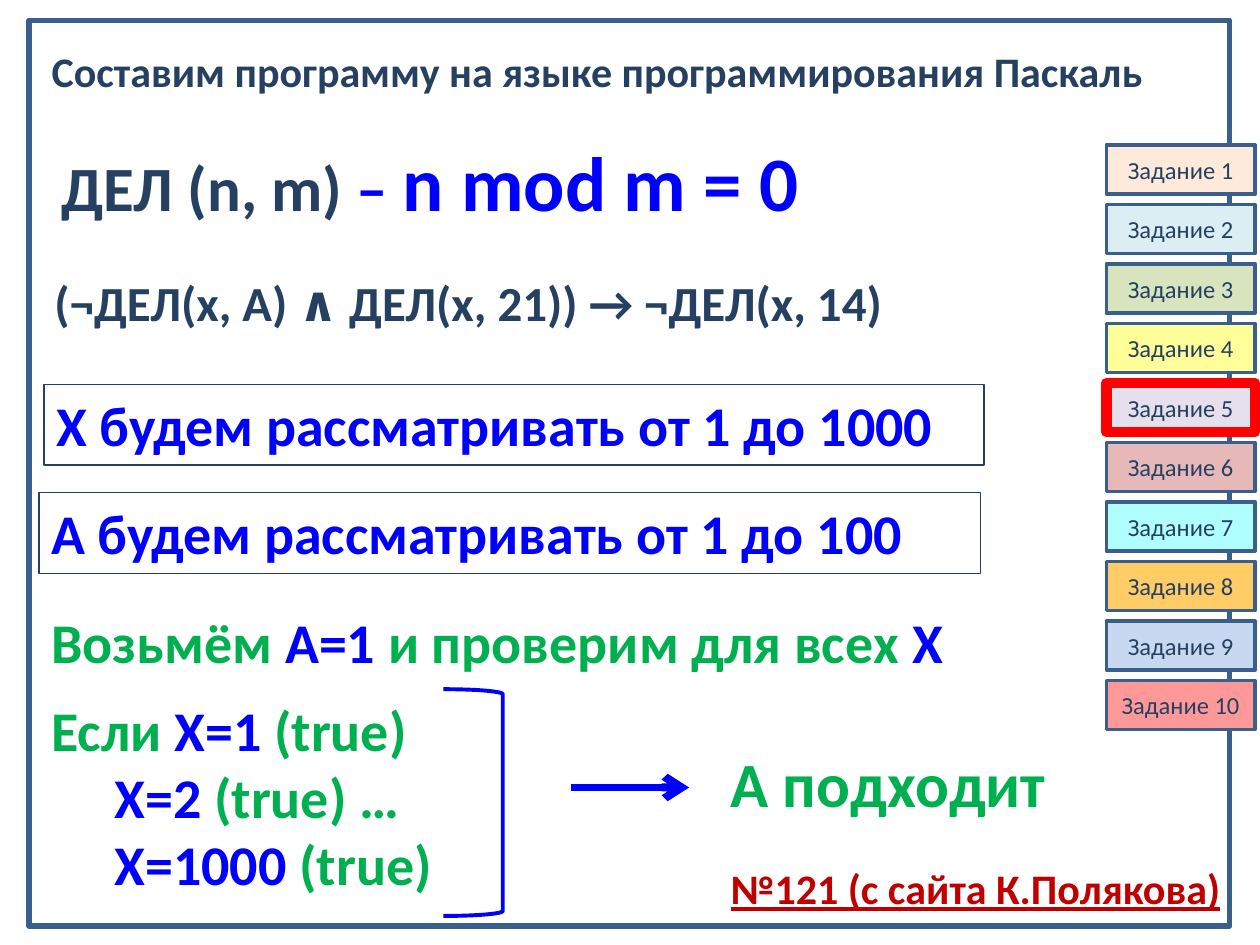
from lxml.etree import SubElement
from pptx import Presentation
from pptx.dml.color import RGBColor
from pptx.enum.shapes import MSO_CONNECTOR, MSO_SHAPE
from pptx.enum.text import MSO_ANCHOR, MSO_AUTO_SIZE, PP_ALIGN
from pptx.oxml.ns import qn
from pptx.util import Inches, Pt

NAVY, BLUE, GREEN, RED, FRAME = "254061", "0000FF", "00B050", "C00000", "3A5F8C"

# Content: a paragraph is a list of (text, colour, size) runs
title = [[("Составим программу на языке программирования Паскаль", NAVY, 24)]]
title_box = (0.31, 0.31, 8.95, 0.5)

texts = [  # position, paragraphs, alignment, wrap
    ((0.39, 1.02, 7.58, 0.84),
     [[("ДЕЛ (n, m) ", NAVY, 36), ("– ", BLUE, 36), ("n mod m = 0", BLUE, 44)]],
     PP_ALIGN.LEFT, True),
    ((0.31, 2.11, 6.81, 0.57),
     [[("(¬ДЕЛ(x, А) ∧ ДЕЛ(x, 21)) → ¬ДЕЛ(x, 14)", NAVY, 28)]],
     PP_ALIGN.CENTER, False),
    ((0.31, 4.77, 7.5, 0.64),
     [[("Возьмём ", GREEN, 32), ("А=1", BLUE, 32),
       (" и проверим для всех", GREEN, 32), (" Х", BLUE, 32)]],
     PP_ALIGN.LEFT, True),
    ((0.31, 5.47, 3.83, 1.72),
     [[("Если ", GREEN, 32), ("Х=1", BLUE, 32), (" (true)", GREEN, 32)],
      [("\tХ=2", BLUE, 32), (" (true) …", GREEN, 32)],
      [("\tХ=1000", BLUE, 32), (" (true)", GREEN, 32)]],
     PP_ALIGN.LEFT, True),
    ((5.7, 5.86, 2.7, 0.71), [[("А подходит", GREEN, 36)]], PP_ALIGN.LEFT, False),
]
source_note = [[("№121 (с сайта К.Полякова)", RED, 24)]]
source_box = (5.7, 6.8, 4.45, 0.5)

ranges = [
    ((0.35, 3.05, 7.46, 0.64), "Х будем рассматривать от 1 до 1000"),
    ((0.31, 3.91, 7.47, 0.64), "А будем рассматривать от 1 до 100"),
]

task_fills = ["FDEADA", "DBEEF4", "D7E4BD", "FFFF99", "E6E0EC",
              "E6B9B8", "AFFFFF", "FFCC66", "C6D9F1", "FF9999"]
current_task = 5
task_left, task_width, task_height = 8.78, 1.18, 0.39
first_top, last_top = 1.15, 5.4


def rgb(colour):
    return RGBColor.from_string(colour)


def inches(box):
    return [Inches(value) for value in box]


def write(frame, paragraphs, align=PP_ALIGN.LEFT, wrap=True, bold=True,
          anchor=MSO_ANCHOR.TOP, underline=None):
    frame.word_wrap = wrap
    frame.auto_size = MSO_AUTO_SIZE.NONE
    frame.vertical_anchor = anchor
    for index, runs in enumerate(paragraphs):
        paragraph = frame.add_paragraph() if index else frame.paragraphs[0]
        paragraph.alignment = align
        for text, colour, size in runs:
            run = paragraph.add_run()
            run.text = text
            font = run.font
            font.name, font.size = "Calibri", Pt(size)
            font.bold, font.underline = bold, underline
            font.color.rgb = rgb(colour)


def add_outlined(kind, box, line, width, fill=None):
    shape = slide.shapes.add_shape(kind, *inches(box))
    shape.shadow.inherit = False
    if fill:
        shape.fill.solid()
        shape.fill.fore_color.rgb = rgb(fill)
    else:
        shape.fill.background()
    shape.line.color.rgb = rgb(line)
    shape.line.width = Pt(width)
    return shape


def add_text(box, paragraphs, **style):
    write(slide.shapes.add_textbox(*inches(box)).text_frame, paragraphs, **style)


prs = Presentation()
prs.slide_width, prs.slide_height = Inches(10), Inches(7.5)
slide = prs.slides.add_slide(prs.slide_layouts[5])

# Title
heading = slide.shapes.title
heading.left, heading.top, heading.width, heading.height = inches(title_box)
write(heading.text_frame, title)

# Frame and source note
add_outlined(MSO_SHAPE.RECTANGLE, (0.23, 0.16, 9.53, 7.19), FRAME, 3)
add_text(source_box, source_note, align=PP_ALIGN.JUSTIFY, underline=True)

# Task buttons, the current one drawn last so its outline stays on top
step = (last_top - first_top) / (len(task_fills) - 1)
tasks = list(enumerate(task_fills, start=1))
for number, fill in sorted(tasks, key=lambda task: task[0] == current_task):
    line, width = ("FF0000", 6) if number == current_task else (FRAME, 2)
    top = first_top + (number - 1) * step
    button = add_outlined(MSO_SHAPE.FLOWCHART_PROCESS,
                          (task_left, top, task_width, task_height), line, width, fill)
    write(button.text_frame, [[(f"Задание {number}", NAVY, 14)]],
          align=PP_ALIGN.CENTER, bold=False, anchor=MSO_ANCHOR.MIDDLE)

# Formulas and reasoning
for box, paragraphs, align, wrap in texts:
    add_text(box, paragraphs, align=align, wrap=wrap)

# Boxed ranges
for box, text in ranges:
    range_box = add_outlined(MSO_SHAPE.RECTANGLE, box, NAVY, 0.75)
    write(range_box.text_frame, [[(text, BLUE, 32)]])

# Bracket and arrow to the conclusion
add_outlined(MSO_SHAPE.RIGHT_BRACKET, (3.52, 5.47, 0.47, 1.8), BLUE, 2.25)
arrow = slide.shapes.add_connector(MSO_CONNECTOR.STRAIGHT, *inches((4.53, 6.25, 5.47, 6.25)))
arrow.line.color.rgb = rgb(BLUE)
arrow.line.width = Pt(4.5)
SubElement(arrow.line._get_or_add_ln(), qn("a:tailEnd"), type="arrow")
SubElement(arrow._element.spPr, qn("a:effectLst"))

prs.save("out.pptx")
